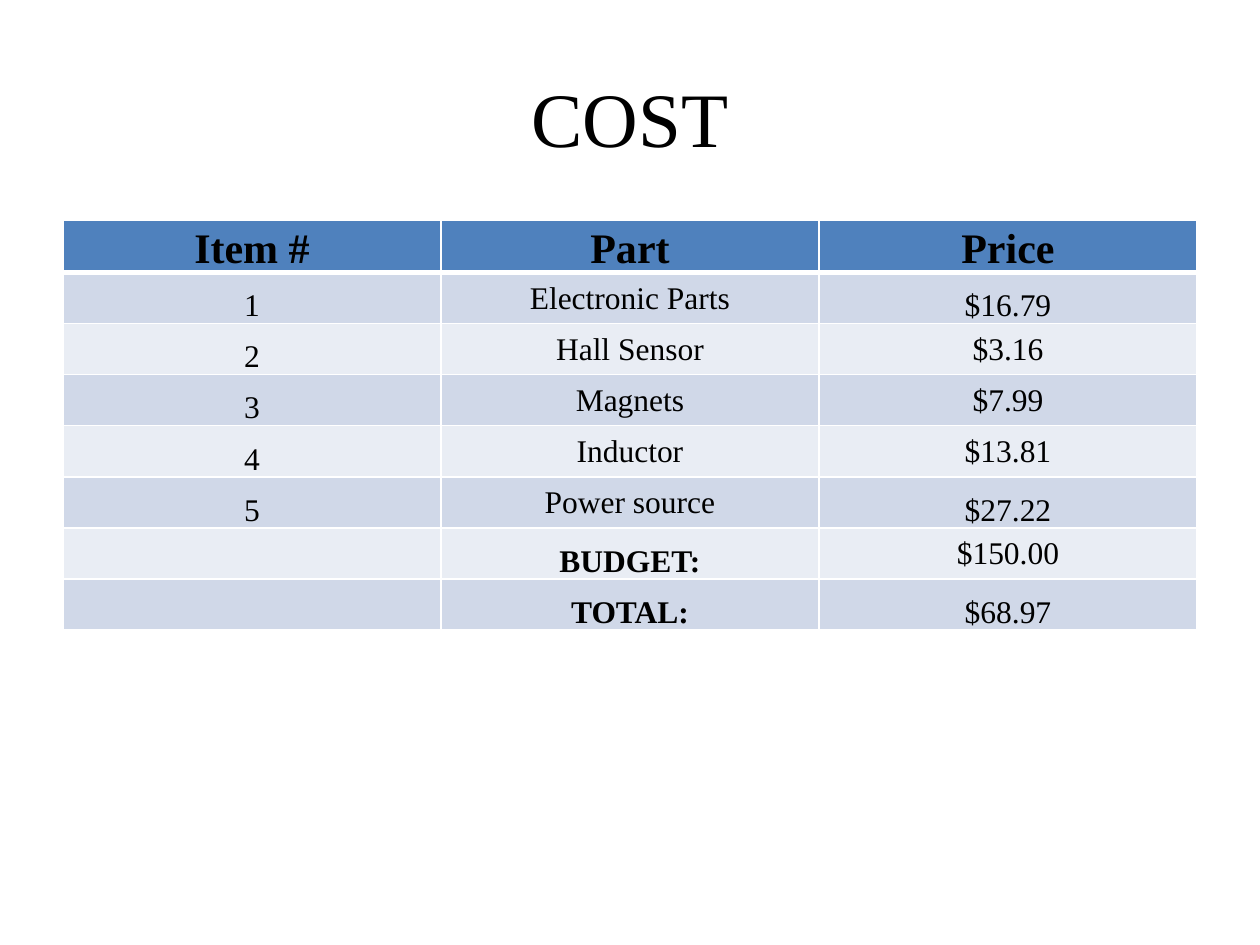
from lxml.etree import SubElement
from pptx import Presentation
from pptx.dml.color import RGBColor
from pptx.enum.text import MSO_ANCHOR, PP_ALIGN
from pptx.oxml.ns import qn
from pptx.util import Inches, Pt

BLACK = RGBColor(0x00, 0x00, 0x00)
WHITE = RGBColor(0xFF, 0xFF, 0xFF)
HEADER_BLUE = RGBColor(0x4F, 0x81, 0xBD)
BANDS = (RGBColor(0xD0, 0xD8, 0xE8), RGBColor(0xE9, 0xED, 0xF4))

HEADINGS = ("Item #", "Part", "Price")
COSTS = (
    ("1", "Electronic Parts", "$16.79"),
    ("2", "Hall Sensor", "$3.16"),
    ("3", "Magnets", "$7.99"),
    ("4", "Inductor", "$13.81"),
    ("5", "Power source", "$27.22"),
    ("", "BUDGET:", "$150.00"),
    ("", "TOTAL:", "$68.97"),
)
SUMMARY_LABELS = ("BUDGET:", "TOTAL:")
LOW_PRICES = ("$16.79", "$27.22", "$68.97")  # prices set at the cell bottom


class CostSlide:
    font_name = "Times New Roman"

    def __init__(self, presentation):
        self.slide = presentation.slides.add_slide(presentation.slide_layouts[6])

    def set_text(self, paragraph, text, size, bold=False):
        paragraph.text = text
        paragraph.alignment = PP_ALIGN.CENTER
        font = paragraph.font
        font.name, font.size, font.bold = self.font_name, Pt(size), bold
        font.color.rgb = BLACK

    def title(self, text, left, top, width, height):
        box = self.slide.shapes.add_textbox(
            Inches(left), Inches(top), Inches(width), Inches(height))
        frame = box.text_frame
        frame.word_wrap = True
        frame.vertical_anchor = MSO_ANCHOR.MIDDLE
        self.set_text(frame.paragraphs[0], text, 44)

    def table(self, rows, left, top, width, height):
        frame = self.slide.shapes.add_table(
            len(rows), len(rows[0]),
            Inches(left), Inches(top), Inches(width), Inches(height))
        for row_index, row in enumerate(rows):
            for column_index, text in enumerate(row):
                cell = frame.table.cell(row_index, column_index)
                self.cell(cell, text, row_index, column_index)

    def cell(self, cell, text, row, column):
        header = row == 0
        low = (header or column == 0
               or text in SUMMARY_LABELS or text in LOW_PRICES)
        cell.vertical_anchor = MSO_ANCHOR.BOTTOM if low else MSO_ANCHOR.MIDDLE
        cell.margin_left = cell.margin_top = cell.margin_right = Inches(0.01)
        cell.margin_bottom = 0
        cell.fill.solid()
        cell.fill.fore_color.rgb = HEADER_BLUE if header else BANDS[(row - 1) % 2]
        self.set_text(cell.text_frame.paragraphs[0], text, 24 if header else 18,
                      header or text in SUMMARY_LABELS)
        self.borders(cell, top=3 if row == 1 else 1, bottom=3 if header else 1)

    def borders(self, cell, top, bottom):
        properties = cell._tc.get_or_add_tcPr()
        widths = {"a:lnL": 1, "a:lnR": 1, "a:lnT": top, "a:lnB": bottom}
        for position, (tag, width) in enumerate(widths.items()):
            line = SubElement(properties, qn(tag), w=str(Pt(width)))
            fill = SubElement(line, qn("a:solidFill"))
            SubElement(fill, qn("a:srgbClr"), val=str(WHITE))
            properties.insert(position, line)  # borders come before the fill


def main():
    presentation = Presentation()
    presentation.slide_width = Inches(10)
    presentation.slide_height = Inches(7.5)
    cost = CostSlide(presentation)

    # Heading
    cost.title("COST", 0.5, 0.3, 9, 1.25)

    # Parts, budget and total
    cost.table((HEADINGS, *COSTS), 0.5, 1.75, 9, 3.25)

    presentation.save("out.pptx")


if __name__ == "__main__":
    main()
